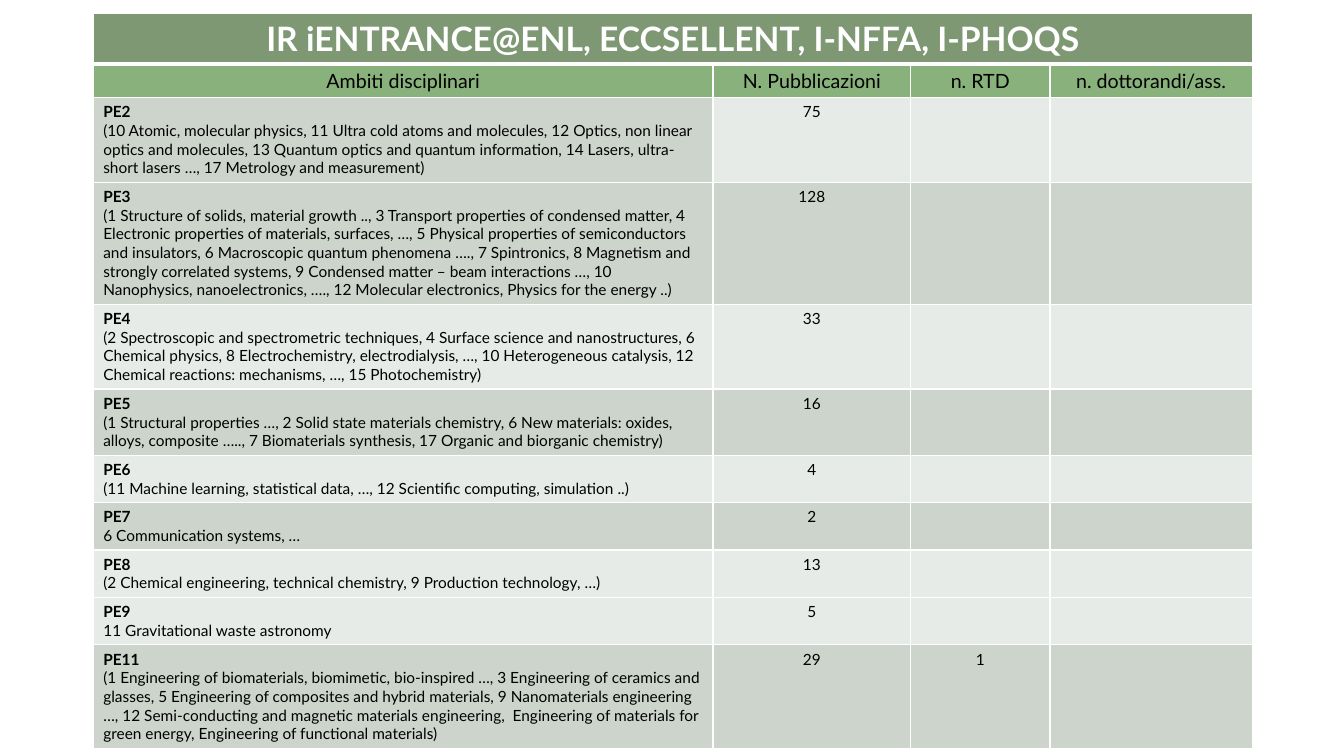
import pptx
import pptx.dml.color
import pptx.enum.text
import pptx.oxml
import pptx.oxml.ns
import pptx.util
from lxml import etree

Cm = pptx.util.Cm
Pt = pptx.util.Pt
CENTER = pptx.enum.text.PP_ALIGN.CENTER
LEFT = pptx.enum.text.PP_ALIGN.LEFT

TITLE = "IR iENTRANCE@ENL, ECCSELLENT, I-NFFA, I-PHOQS"
HEADINGS = ["Ambiti disciplinari", "N. Pubblicazioni", "n. RTD", "n. dottorandi/ass."]
COLUMN_WIDTHS = [15.62, 4.98, 3.51, 5.1]
DARK, LIGHT = "CCD4CC", "E7EBE8"

SECTORS = [
    ("PE2", "(10 Atomic, molecular physics, 11 Ultra cold atoms and molecules, 12 Optics, non linear "
     "optics and molecules, 13 Quantum optics and quantum information, 14 Lasers, ultra-short "
     "lasers …, 17 Metrology and measurement)", 4, "75", "", DARK, LIGHT),
    ("PE3", "(1 Structure of solids, material growth .., 3 Transport properties of condensed matter, "
     "4 Electronic properties of materials, surfaces, …, 5 Physical properties of semiconductors "
     "and insulators, 6 Macroscopic quantum phenomena …., 7 Spintronics, 8 Magnetism and strongly "
     "correlated systems, 9 Condensed matter – beam interactions …, 10 Nanophysics, "
     "nanoelectronics, …., 12 Molecular electronics, Physics for the energy ..)",
     6, "128", "", DARK, DARK),
    ("PE4", "(2 Spectroscopic and spectrometric techniques, 4 Surface science and nanostructures, "
     "6 Chemical physics, 8 Electrochemistry, electrodialysis, …, 10 Heterogeneous catalysis, "
     "12 Chemical reactions: mechanisms, …, 15 Photochemistry)", 4, "33", "", LIGHT, LIGHT),
    ("PE5", "(1 Structural properties …, 2 Solid state materials chemistry, 6 New materials: oxides, "
     "alloys, composite ….., 7 Biomaterials synthesis, 17 Organic and biorganic chemistry)",
     3, "16", "", DARK, DARK),
    ("PE6", "(11 Machine learning, statistical data, …, 12 Scientific computing, simulation ..)",
     2, "4", "", LIGHT, LIGHT),
    ("PE7", "6 Communication systems, …", 2, "2", "", DARK, DARK),
    ("PE8", "(2 Chemical engineering, technical chemistry, 9 Production technology, …)",
     2, "13", "", LIGHT, LIGHT),
    ("PE9", "11 Gravitational waste astronomy", 2, "5", "", LIGHT, LIGHT),
    ("PE11", "(1 Engineering of biomaterials, biomimetic, bio-inspired …, 3 Engineering of ceramics "
     "and glasses, 5 Engineering of composites and hybrid materials, 9 Nanomaterials engineering …, "
     "12 Semi-conducting and magnetic materials engineering,  Engineering of materials for green "
     "energy, Engineering of functional materials)", 5, "29", "1", DARK, DARK),
]


def color(hex_value):
    return pptx.dml.color.RGBColor.from_string(hex_value)


class SlideBuilder:
    font_name = "Lato"
    border_color = "FFFFFF"

    def __init__(self, slide):
        self.slide = slide

    def table(self, left, top, widths, heights):
        frame = self.slide.shapes.add_table(len(heights), len(widths), Cm(left), Cm(top),
                                            Cm(sum(widths)), Cm(sum(heights)))
        grid = frame.table
        for flag, value in {"first_row": False, "horz_banding": False}.items():
            setattr(grid, flag, value)
        for column, width in zip(grid.columns, widths):
            column.width = Cm(width)
        for row, height in zip(grid.rows, heights):
            row.height = Cm(height)
        return grid

    def cell(self, cell, fill, alpha=None, top=1, bottom=1):
        cell.fill.solid()
        cell.fill.fore_color.rgb = color(fill)
        properties = cell._tc.get_or_add_tcPr()
        if alpha:
            tint = properties.find(".//" + pptx.oxml.ns.qn("a:srgbClr"))
            etree.SubElement(tint, pptx.oxml.ns.qn("a:alpha"), val=str(alpha * 1000))
        sides = {"L": 1, "R": 1, "T": top, "B": bottom}
        for position, (side, width) in enumerate(sides.items()):
            properties.insert(position, pptx.oxml.parse_xml(
                f'<a:ln{side} {pptx.oxml.ns.nsdecls("a")} w="{Pt(width)}"><a:solidFill>'
                f'<a:srgbClr val="{self.border_color}"/></a:solidFill></a:ln{side}>'))

    def text(self, cell, lines, size, align=CENTER, ink="000000", bold_first=False):
        cell.text = "\n".join(lines)
        for index, paragraph in enumerate(cell.text_frame.paragraphs):
            paragraph.alignment = align
            style = {"name": self.font_name, "size": Pt(size),
                     "bold": bold_first and index == 0}
            for font in [paragraph.font] + [run.font for run in paragraph.runs]:
                for attribute, value in style.items():
                    setattr(font, attribute, value)
                font.color.rgb = color(ink)


def main():
    presentation = pptx.Presentation()
    presentation.slide_width = Cm(33.87)
    presentation.slide_height = Cm(19.05)
    builder = SlideBuilder(presentation.slides.add_slide(presentation.slide_layouts[6]))

    heights = [1.25, 0.84] + [0.25 + 0.46 * sector[2] for sector in SECTORS]
    publications = builder.table(2.35, 0.34, COLUMN_WIDTHS, heights)

    for column, heading in enumerate(HEADINGS):
        builder.cell(publications.cell(0, column), "275417", alpha=60, bottom=3)
        heading_cell = publications.cell(1, column)
        builder.cell(heading_cell, "3B7D23", alpha=60, top=3)
        builder.text(heading_cell, [heading], 14)

    title_cell = publications.cell(0, 0)
    title_cell.merge(publications.cell(0, 3))
    builder.text(title_cell, [TITLE], 24, ink="FFFFFF", bold_first=True)

    for row, sector in enumerate(SECTORS, start=2):
        code, topics, _, papers, researchers, topic_fill, count_fill = sector
        topic_cell = publications.cell(row, 0)
        builder.cell(topic_cell, topic_fill)
        builder.text(topic_cell, [code, topics], 11, align=LEFT, bold_first=True)
        for column, count in enumerate([papers, researchers, ""], start=1):
            count_cell = publications.cell(row, column)
            builder.cell(count_cell, count_fill)
            builder.text(count_cell, [count], 11)

    presentation.save("out.pptx")


if __name__ == "__main__":
    main()
